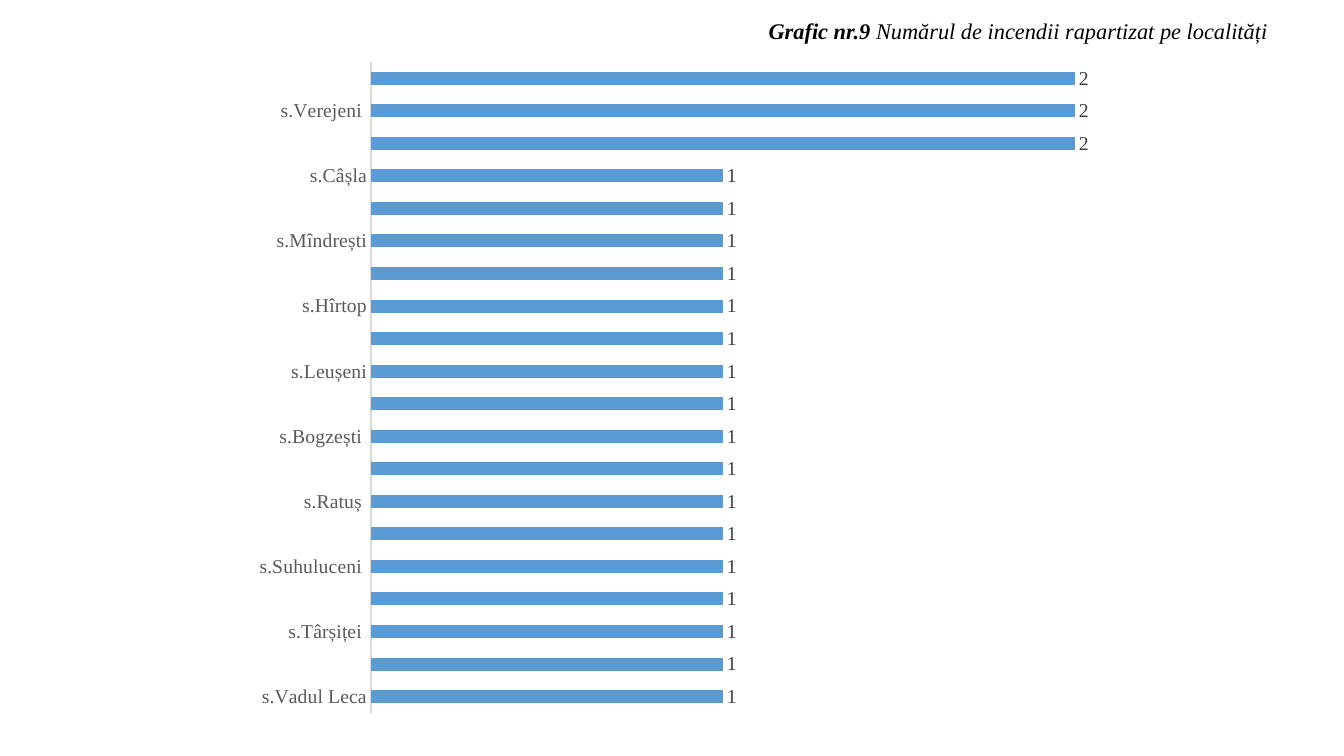
from lxml import etree
from pptx import Presentation
from pptx import util as u
from pptx.chart.data import CategoryChartData
from pptx.dml.color import RGBColor
from pptx.enum import chart as ch, text
from pptx.oxml.ns import qn

# Content
TITLE_RUNS = [(" Grafic nr.9 ", True), ("Numărul de incendii rapartizat pe localități", False)]
SERIES_NAME = "Series 1"
FIRES = [  # bottom bar first
    ("s.Vadul Leca", 1), ("s.Căzănești ", 1), ("s.Târșiței ", 1), ("s.Ghiliceni ", 1),
    ("s.Suhuluceni ", 1), ("s.Scorțeni ", 1), ("s.Ratuș ", 1), ("s.Zăicani ", 1),
    ("s.Bogzești ", 1), ("s.Băneștii Noi ", 1), ("s.Leușeni", 1), ("s. Negureni ", 1),
    ("s.Hîrtop", 1), ("or.Telenești ", 1), ("s.Mîndrești", 1), ("s.Codru", 1),
    ("s.Câșla", 1), ("s.Budăi ", 2), ("s.Verejeni ", 2), ("s.Sărătenii Vechi ", 2),
]

# Boxes in points: left, top, width, height
PAGE_SIZE = (960, 540)
TITLE_BOX = (537.84, 8.64, 380.16, 26.64)
CHART_BOX = (170.64, 35.28, 737.28, 483.84)
PLOT_BOX = (265, 44.3, 628.6, 465)


class Theme:
    font = "Times New Roman"
    title_size, chart_size = u.Pt(16), u.Pt(14)
    ink = RGBColor.from_string("000000")
    axis_text = RGBColor.from_string("595959")
    axis_line = RGBColor.from_string("D9D9D9")
    value_text = RGBColor.from_string("404040")
    bar = RGBColor.from_string("5B9BD5")


def points(values):
    return [u.Pt(value) for value in values]


def style_font(font, size, color):
    font.name, font.size = Theme.font, size
    font.color.rgb = color


def add_title(page):
    box = page.shapes.title
    box.left, box.top, box.width, box.height = points(TITLE_BOX)
    frame = box.text_frame
    frame.word_wrap = False
    frame.auto_size = text.MSO_AUTO_SIZE.SHAPE_TO_FIT_TEXT
    frame.vertical_anchor = text.MSO_ANCHOR.TOP
    para = frame.paragraphs[0]
    para.alignment = text.PP_ALIGN.LEFT
    para.line_spacing = 1.0
    para.space_before = u.Pt(0)
    for words, bold in TITLE_RUNS:
        span = para.add_run()
        span.text = words
        style_font(span.font, Theme.title_size, Theme.ink)
        span.font.bold, span.font.italic = bold, True


def place_plot(chart):
    """Fix the inner plot area as fractions of the chart box."""
    area = chart.element.find(".//" + qn("c:plotArea"))
    old = area.find(qn("c:layout"))
    if old is not None:
        area.remove(old)
    left, top, width, height = CHART_BOX
    plot_left, plot_top, plot_width, plot_height = PLOT_BOX
    settings = {
        "layoutTarget": "inner", "xMode": "edge", "yMode": "edge",
        "x": (plot_left - left) / width, "y": (plot_top - top) / height,
        "w": plot_width / width, "h": plot_height / height,
    }
    layout = etree.Element(qn("c:layout"))
    manual = etree.SubElement(layout, qn("c:manualLayout"))
    for name, value in settings.items():
        etree.SubElement(manual, qn("c:" + name)).set("val", str(value))
    area.insert(0, layout)


def add_fire_chart(page):
    data = CategoryChartData()
    data.categories = [place for place, _ in FIRES]
    data.add_series(SERIES_NAME, [count for _, count in FIRES])
    chart = page.shapes.add_chart(
        ch.XL_CHART_TYPE.BAR_CLUSTERED, *points(CHART_BOX), data).chart
    style_font(chart.font, Theme.chart_size, Theme.ink)
    chart.has_legend = chart.has_title = False

    # Axes
    places, counts = chart.category_axis, chart.value_axis
    places.major_tick_mark = places.minor_tick_mark = ch.XL_TICK_MARK.NONE
    places.has_major_gridlines = counts.has_major_gridlines = False
    style_font(places.tick_labels.font, Theme.chart_size, Theme.axis_text)
    places.format.line.color.rgb = Theme.axis_line
    places.format.line.width = u.Pt(0.75)
    counts.minimum_scale, counts.maximum_scale = 0, 2.5
    counts.visible = False

    # Bars and their values
    plot = chart.plots[0]
    plot.gap_width, plot.overlap = 150, -25
    plot.vary_by_categories = False
    bars = plot.series[0]
    bars.format.fill.solid()
    bars.format.fill.fore_color.rgb = Theme.bar
    labels = bars.data_labels
    labels.show_value = True
    labels.position = ch.XL_LABEL_POSITION.OUTSIDE_END
    style_font(labels.font, Theme.chart_size, Theme.value_text)
    place_plot(chart)


def main():
    deck = Presentation()
    deck.slide_width, deck.slide_height = points(PAGE_SIZE)
    title_only = deck.slide_layouts[5]
    page = deck.slides.add_slide(title_only)
    add_title(page)
    add_fire_chart(page)
    deck.save("out.pptx")


if __name__ == "__main__":
    main()
